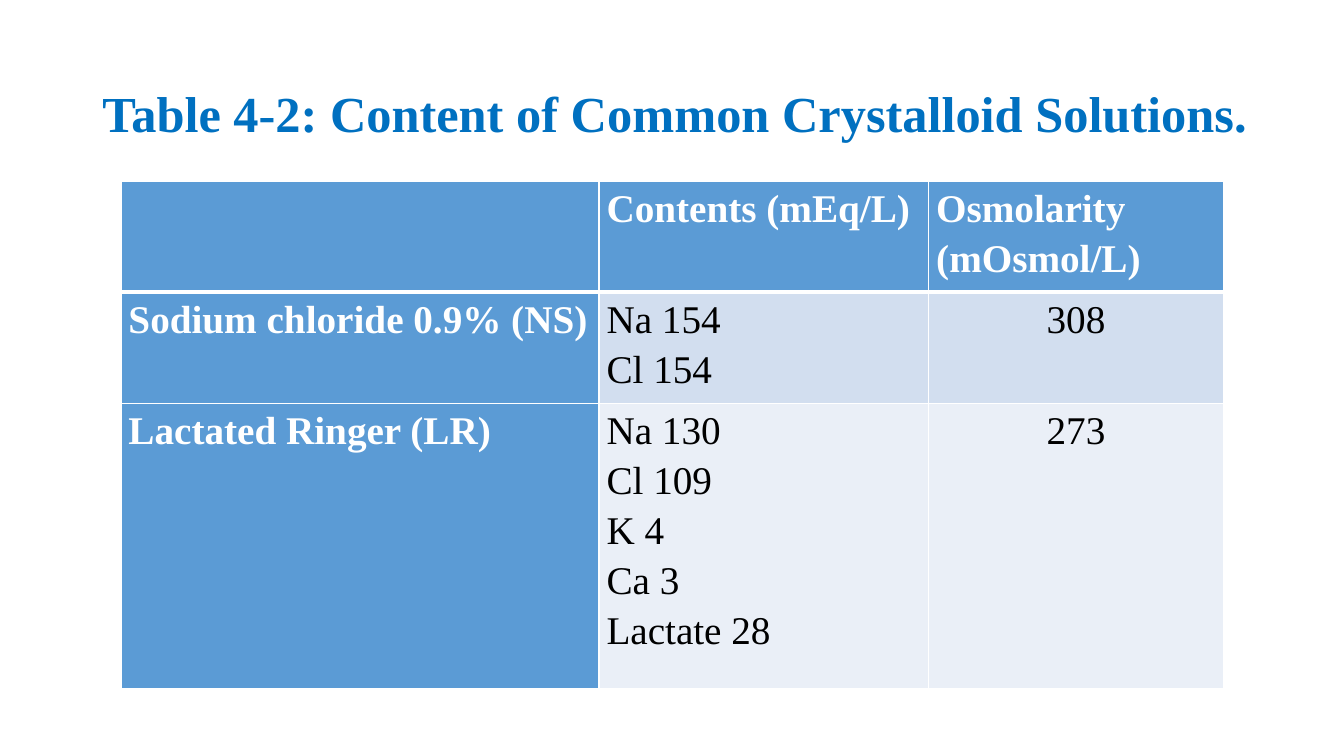
from lxml import etree
from pptx import Presentation
from pptx.dml.color import RGBColor
from pptx.enum import text
from pptx.oxml import ns
from pptx.util import Pt

FONT = "Times New Roman"
WHITE, BLACK, TITLE_BLUE, HEAD_BLUE = "FFFFFF", "000000", "0070C0", "5B9BD5"
BANDS = ["D2DEEF", "EAEFF7"]
JUSTIFY, CENTER = text.PP_ALIGN.JUSTIFY, text.PP_ALIGN.CENTER

COL_WIDTHS = [341.5, 235.5, 210.5]
ROW_HEIGHTS = [79.2, 79.2, 203.8]
ROWS = [
    [[], ["Contents (mEq/L) "], ["Osmolarity (mOsmol/L) "]],
    [["Sodium chloride 0.9% (NS)"], ["Na 154 ", "Cl 154"], ["308"]],
    [["Lactated Ringer (LR)"],
     ["Na 130 ", "Cl 109 ", "K 4 ", "Ca 3 ", "Lactate 28"], ["273"]],
]


def rgb(color):
    return RGBColor.from_string(color)


def set_attrs(obj, **values):
    for name, value in values.items():
        setattr(obj, name, value)


def write_lines(tf, lines, size, color, bold, align):
    for i, line in enumerate(lines):
        p = tf.paragraphs[0] if i == 0 else tf.add_paragraph()
        set_attrs(p, alignment=align, line_spacing=1.15,
                  space_before=Pt(0), space_after=Pt(0))
        r = p.add_run()
        r.text = line
        set_attrs(r.font, name=FONT, size=Pt(size), bold=bold)
        r.font.color.rgb = rgb(color)


def add_borders(cell, widths):
    """Draw white cell edges; widths maps L, R, T and B, in that order."""
    tc_pr = cell._tc.get_or_add_tcPr()
    for side, width in widths.items():
        ln = etree.SubElement(tc_pr, ns.qn(f"a:ln{side}"), w=str(Pt(width)))
        fill = etree.SubElement(ln, ns.qn("a:solidFill"))
        etree.SubElement(fill, ns.qn("a:srgbClr"), val=WHITE)


def add_title(slide, title):
    sp = slide.shapes.title
    set_attrs(sp, left=Pt(55.4), top=Pt(31.7), width=Pt(853.2), height=Pt(90.7))
    tf = sp.text_frame
    set_attrs(tf, word_wrap=True, auto_size=text.MSO_AUTO_SIZE.NONE,
              vertical_anchor=text.MSO_ANCHOR.MIDDLE)
    write_lines(tf, [title], 36, TITLE_BLUE, True, CENTER)


def fill_cell(cell, row, col, lines):
    heading = row == 0 or col == 0
    set_attrs(cell, margin_left=Pt(5.4), margin_right=Pt(5.4),
              margin_top=0, margin_bottom=0)
    add_borders(cell, {"L": 1, "R": 1, "T": 3 if row == 1 else 1,
                       "B": 3 if row == 0 else 1})
    cell.fill.solid()
    cell.fill.fore_color.rgb = rgb(HEAD_BLUE if heading else BANDS[row - 1])
    write_lines(cell.text_frame, lines, 28, WHITE if heading else BLACK, heading,
                CENTER if row and col == 2 else JUSTIFY)


def add_solutions_table(slide):
    table = slide.shapes.add_table(
        len(ROWS), len(COL_WIDTHS), Pt(86.4), Pt(129.6),
        Pt(sum(COL_WIDTHS)), Pt(sum(ROW_HEIGHTS))).table
    for column, width in zip(table.columns, COL_WIDTHS):
        column.width = Pt(width)
    for i, (row, height) in enumerate(zip(table.rows, ROW_HEIGHTS)):
        row.height = Pt(height)
        for j, lines in enumerate(ROWS[i]):
            fill_cell(table.cell(i, j), i, j, lines)


def main():
    prs = Presentation()
    set_attrs(prs, slide_width=Pt(960), slide_height=Pt(540))
    slide = prs.slides.add_slide(prs.slide_layouts[5])
    add_title(slide, "Table 4-2: Content of Common Crystalloid Solutions.")
    add_solutions_table(slide)
    prs.save("out.pptx")


if __name__ == "__main__":
    main()
